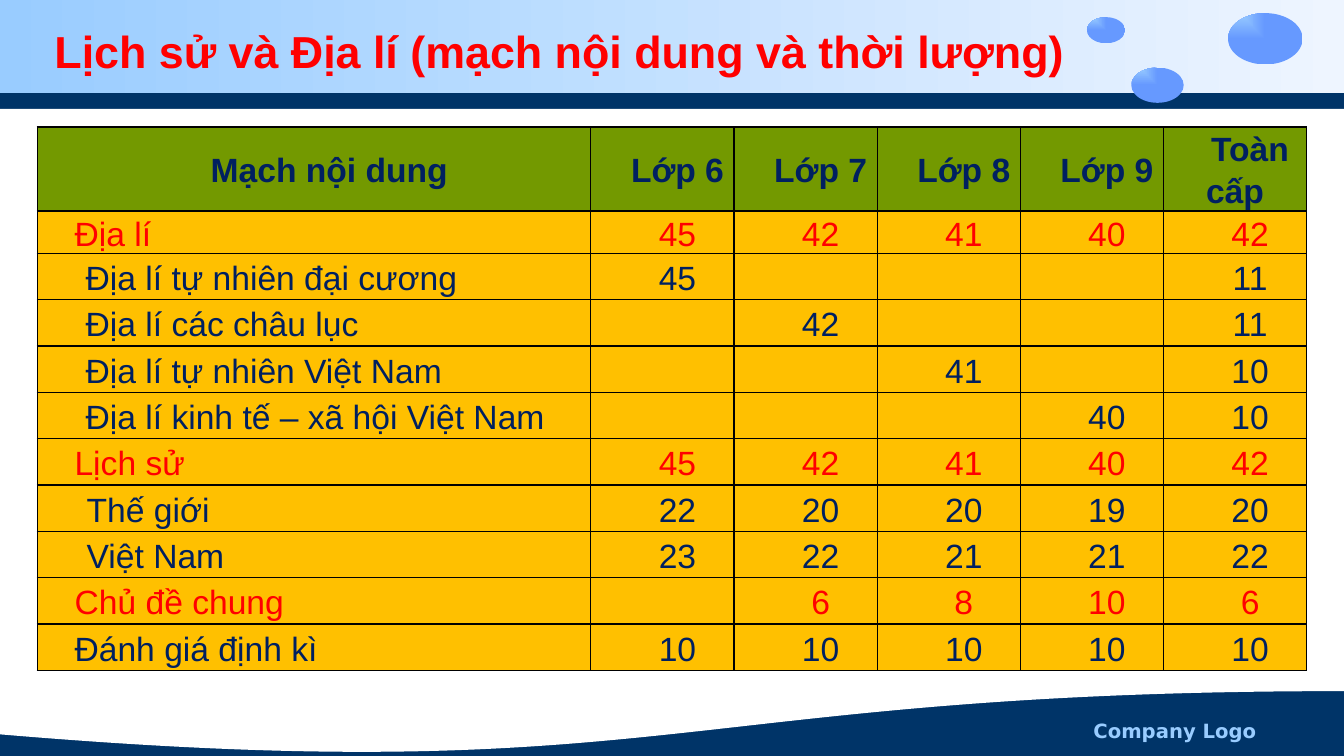
from lxml.etree import SubElement
from pptx import Presentation
from pptx.dml.color import RGBColor
from pptx.enum.shapes import MSO_SHAPE as Shape
from pptx.enum.text import MSO_ANCHOR as Anchor, MSO_AUTO_SIZE as AutoSize, PP_ALIGN as Align
from pptx.oxml.ns import qn
from pptx.util import Inches, Pt

WIDTH, HEIGHT = 13.33, 7.5
NAVY, INK, RED, WHITE, SKY = "003468", "002060", "FF0000", "FFFFFF", "99CCFF"
HEADER_FILL, BODY_FILL = "739900", "FFC000"

COLUMNS = [5.49] + [1.42] * 5
ROWS = [0.83, 0.42] + [0.46] * 9
HEADER = ["Mạch nội dung", "Lớp 6", "Lớp 7", "Lớp 8", "Lớp 9", "Toàn cấp"]
# Label, left margin, text colour, then one value per column
TOPICS = [
    ("Địa lí", 0, RED, [45, 42, 41, 40, 42]),
    ("Địa lí tự nhiên đại cương", 0.11, INK, [45, "", "", "", 11]),
    ("Địa lí các châu lục", 0.11, INK, ["", 42, "", "", 11]),
    ("Địa lí tự nhiên Việt Nam", 0.11, INK, ["", "", 41, "", 10]),
    ("Địa lí kinh tế – xã hội Việt Nam", 0.11, INK, ["", "", "", 40, 10]),
    ("Lịch sử", 0, RED, [45, 42, 41, 40, 42]),
    ("Thế giới", 0.12, INK, [22, 20, 20, 19, 20]),
    ("Việt Nam", 0.12, INK, [23, 22, 21, 21, 22]),
    ("Chủ đề chung", 0, RED, ["", 6, 8, 10, 6]),
    ("Đánh giá định kì", 0, INK, [10, 10, 10, 10, 10]),
]
BUBBLES = [(10.78, 0.17, 0.38, 0.26), (11.22, 0.67, 0.52, 0.35), (12.18, 0.13, 0.74, 0.51)]


def colour(value):
    return RGBColor.from_string(value)


def paint(fill, value):
    fill.solid()
    fill.fore_color.rgb = colour(value)


def blend(fill, start, end):
    fill.gradient()
    fill.gradient_angle = 0
    for stop, value in zip(fill.gradient_stops, (start, end)):
        stop.color.rgb = colour(value)


def style(para, size, value, bold=False, font="Arial"):
    para.font.name, para.font.size, para.font.bold = font, Pt(size), bold
    para.font.color.rgb = colour(value)


def add_plain(page, kind, left, top, width, height):
    shape = page.shapes.add_shape(kind, *map(Inches, (left, top, width, height)))
    shape.shadow.inherit = False
    shape.line.fill.background()
    return shape


def add_bubble(page, place):
    bubble = add_plain(page, Shape.OVAL, *place)
    blend(bubble.fill, SKY, "6699FF")
    # Light spreads from the top left corner
    gradient = bubble._element.spPr.find(qn("a:gradFill"))
    gradient.remove(gradient.find(qn("a:lin")))
    spread = SubElement(gradient, qn("a:path"), {"path": "rect"})
    SubElement(spread, qn("a:fillToRect"), {"r": "100000", "b": "100000"})


def add_backdrop(page):
    paint(page.background.fill, NAVY)
    band = add_plain(page, Shape.RECTANGLE, 0, 0, WIDTH, 0.92)
    blend(band.fill, SKY, "EEF5FF")
    for kind, top, height in ((Shape.RECTANGLE, 1.08, 4), (Shape.FLOWCHART_DOCUMENT, 4.25, 3.25)):
        paint(add_plain(page, kind, 0, top, WIDTH, height).fill, WHITE)
    for place in BUBBLES:
        add_bubble(page, place)


def add_title(page, text):
    title = page.shapes.title
    title.left, title.top, title.width, title.height = map(Inches, (0.44, 0.17, 11.33, 0.67))
    frame = title.text_frame
    frame.text = text
    frame.auto_size, frame.vertical_anchor = AutoSize.NONE, Anchor.MIDDLE
    frame.paragraphs[0].alignment = Align.LEFT
    style(frame.paragraphs[0], 32, RED, bold=True)
    page.shapes._spTree.append(title._element)  # in front of the backdrop


def add_borders(cell):
    properties = cell._tc.get_or_add_tcPr()
    for index, side in enumerate(("lnL", "lnR", "lnT", "lnB")):
        line = properties.makeelement(qn("a:" + side), {"w": str(Pt(1))})
        SubElement(SubElement(line, qn("a:solidFill")), qn("a:srgbClr"), {"val": "000000"})
        properties.insert(index, line)


def fill_cell(cell, text, fill, value, bold=False, align=Align.CENTER, margin=0):
    cell.margin_left = cell.margin_right = Inches(0.07)
    cell.margin_top = cell.margin_bottom = 0
    cell.vertical_anchor = Anchor.MIDDLE
    paint(cell.fill, fill)
    add_borders(cell)
    cell.text = str(text)
    para = cell.text_frame.paragraphs[0]
    style(para, 24, value, bold)
    para.alignment, para.line_spacing = align, 1.12
    para.space_before = para.space_after = Pt(2)
    indents = para._p.get_or_add_pPr()
    indents.set("marL", str(Inches(margin)))
    indents.set("indent", str(Inches(0.3)))


def add_hours_table(page):
    size = map(Inches, (0.37, 1.26, sum(COLUMNS), sum(ROWS)))
    table = page.shapes.add_table(len(ROWS), len(COLUMNS), *size).table
    table.first_row = table.horz_banding = False
    for column, width in zip(table.columns, COLUMNS):
        column.width = Inches(width)
    for row, height in zip(table.rows, ROWS):
        row.height = Inches(height)
    for index, text in enumerate(HEADER):
        fill_cell(table.cell(0, index), text, HEADER_FILL, INK, bold=True)
    for row, (label, margin, value, hours) in enumerate(TOPICS, 1):
        fill_cell(table.cell(row, 0), label, BODY_FILL, value, align=Align.JUSTIFY, margin=margin)
        for index, hour in enumerate(hours, 1):
            fill_cell(table.cell(row, index), hour, BODY_FILL, value)


def add_footer(page, text):
    box = page.shapes.add_textbox(*map(Inches, (8.56, 7.08, 4, 0.33)))
    box.text_frame.word_wrap = True
    para = box.text_frame.paragraphs[0]
    para.text, para.alignment = text, Align.RIGHT
    style(para, 14, SKY, bold=True, font="DejaVu Sans")


def main():
    deck = Presentation()
    deck.slide_width, deck.slide_height = Inches(WIDTH), Inches(HEIGHT)
    page = deck.slides.add_slide(deck.slide_layouts[5])
    add_backdrop(page)
    add_title(page, "Lịch sử và Địa lí (mạch nội dung và thời lượng)")
    add_hours_table(page)
    add_footer(page, "Company Logo")
    deck.save("out.pptx")


if __name__ == "__main__":
    main()
